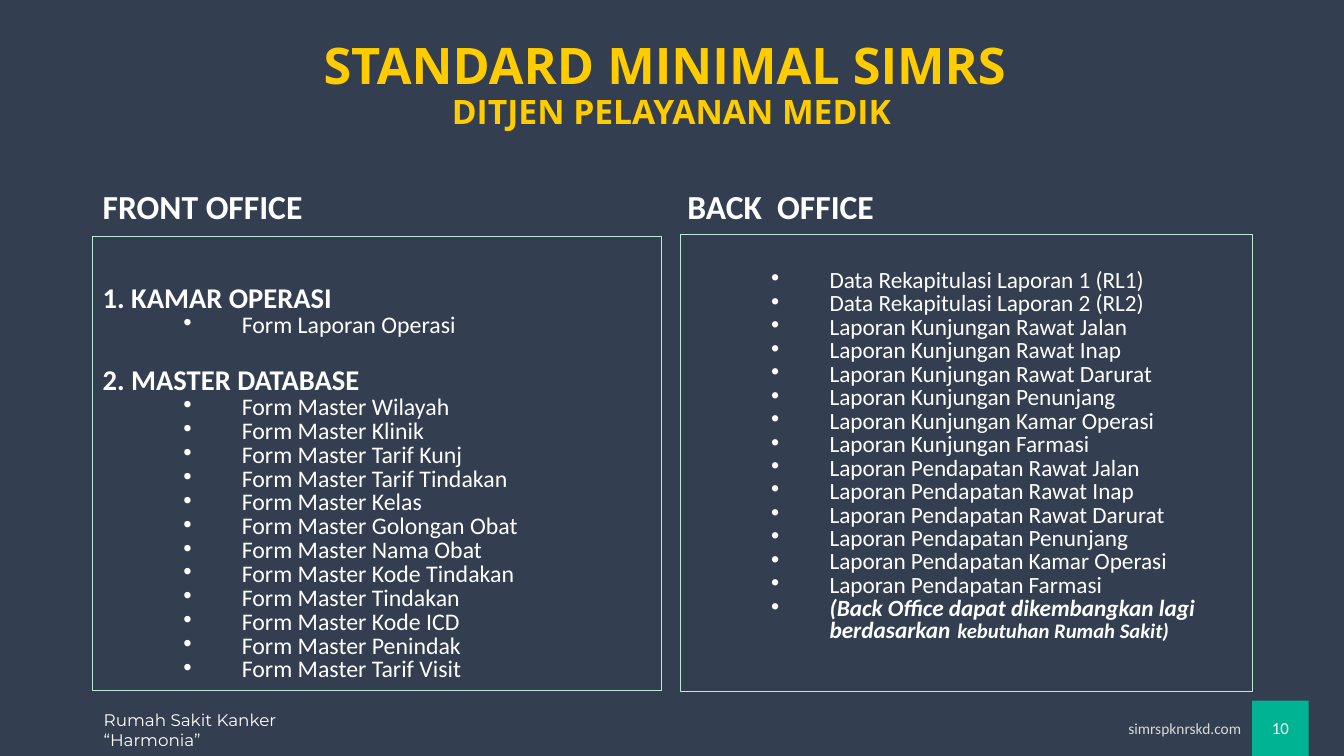
"""Build the SIMRS minimum standard slide with front and back office panels."""
from lxml import etree
from pptx import Presentation
from pptx import util as u
from pptx.dml.color import RGBColor
from pptx.enum import shapes, text
from pptx.oxml.ns import qn

NAVY = RGBColor(0x33, 0x3F, 0x50)
TEAL = RGBColor(0x00, 0xB3, 0x93)
MINT = RGBColor(0xBD, 0xEA, 0xDA)
GOLD = RGBColor(0xFF, 0xCC, 0x00)
WHITE = RGBColor(0xFF, 0xFF, 0xFF)
SILVER = RGBColor(0xD9, 0xD9, 0xD9)

TOP, MIDDLE, BOTTOM = text.MSO_ANCHOR.TOP, text.MSO_ANCHOR.MIDDLE, text.MSO_ANCHOR.BOTTOM
LEFT, CENTER, RIGHT = text.PP_ALIGN.LEFT, text.PP_ALIGN.CENTER, text.PP_ALIGN.RIGHT

MASTER_FORMS = ["Wilayah", "Klinik", "Tarif Kunj", "Tarif Tindakan", "Kelas", "Golongan Obat",
                "Nama Obat", "Kode Tindakan", "Tindakan", "Kode ICD", "Penindak", "Tarif Visit"]
UNITS = ["Rawat Jalan", "Rawat Inap", "Rawat Darurat", "Penunjang", "Kamar Operasi", "Farmasi"]

front_lines = [("1. KAMAR OPERASI", 0), ("Form Laporan Operasi", 4.8), ("2. MASTER DATABASE", 27)]
front_lines += [(f"Form Master {form}", 4.8) for form in MASTER_FORMS]
back_lines = [(f"Data Rekapitulasi Laporan {n} (RL{n})", 4.8 * (n - 1)) for n in (1, 2)]
back_lines += [(f"Laporan {topic} {unit}", 4.8) for topic in ("Kunjungan", "Pendapatan") for unit in UNITS]
back_lines.append(("", 4.8))


def style(para, size, color=WHITE, name="Calibri", bold=False, spacing=0.9, align=LEFT):
    para.alignment = align
    para.line_spacing = spacing
    para.font.size = u.Pt(size)
    para.font.name = name
    para.font.bold = bold
    para.font.color.rgb = color


def add_bullet(para):
    props = para._p.get_or_add_pPr()
    props.set("marL", str(u.Inches(1.38)))
    props.set("indent", str(u.Inches(-0.58)))
    etree.SubElement(props, qn("a:buFont"), typeface="Arial")
    etree.SubElement(props, qn("a:buChar"), char="•")


deck = Presentation()
deck.slide_width, deck.slide_height = u.Inches(13.33), u.Inches(7.5)
page = deck.slides.add_slide(deck.slide_layouts[6])
page.background.fill.solid()
page.background.fill.fore_color.rgb = NAVY

badge = page.shapes.add_shape(shapes.MSO_SHAPE.RECTANGLE, u.Inches(12.42), u.Inches(6.95),
                              u.Inches(0.56), u.Inches(0.55))
badge.shadow.inherit = False
badge.fill.solid()
badge.fill.fore_color.rgb = TEAL
badge.line.fill.background()

labels = [
    ("simrspknrskd.com", (10.37, 7.11, 2.04, 0.23), 11, SILVER, "Calibri", False, 0.9, RIGHT, TOP),
    ("Rumah Sakit Kanker\v“Harmonia”", (0.93, 6.99, 2.87, 0.5), 12, WHITE, "Montserrat", False, 1.0, LEFT, TOP),
    ("STANDARD MINIMAL SIMRS \vDITJEN PELAYANAN MEDIK", (0.91, 0.13, 11.5, 1.45), 36, GOLD, "Open Sans",
     True, 0.9, CENTER, MIDDLE),
    ("FRONT OFFICE", (0.92, 1.64, 5.64, 0.66), 24, WHITE, "Calibri", True, 0.9, LEFT, BOTTOM),
    ("BACK  OFFICE", (6.72, 1.69, 5.67, 0.61), 24, WHITE, "Calibri", True, 0.9, LEFT, BOTTOM),
    ("10", (12.42, 7.11, 0.56, 0.23), 12, WHITE, "Calibri", False, 1.0, CENTER, MIDDLE),
]
for words, place, size, color, name, bold, spacing, align, anchor in labels:
    box = page.shapes.add_textbox(*map(u.Inches, place))
    box.text_frame.word_wrap = True
    box.text_frame.vertical_anchor = anchor
    para = box.text_frame.paragraphs[0]
    para.text = words
    style(para, size, color, name, bold, spacing, align)
    if size == 36:
        para.runs[1].font.size = u.Pt(24)

panels = [
    ((0.92, 2.35, 5.64, 4.5), 0.55, 17, front_lines),
    ((6.75, 2.33, 5.67, 4.53), 0.4, 16.6, back_lines),
]
for place, top_inset, item_size, lines in panels:
    panel = page.shapes.add_shape(shapes.MSO_SHAPE.RECTANGLE, *map(u.Inches, place))
    panel.shadow.inherit = False
    panel.fill.background()
    panel.line.color.rgb = MINT
    panel.line.width = u.Pt(0.75)
    frame = panel.text_frame
    frame.word_wrap = True
    frame.vertical_anchor = TOP
    frame.margin_top = u.Inches(top_inset)
    for index, (words, gap) in enumerate(lines):
        para = frame.paragraphs[0] if index == 0 else frame.add_paragraph()
        heading = words[:1].isdigit()
        if words:
            para.text = words
        if not heading:
            add_bullet(para)
        style(para, 20.4 if heading else item_size, bold=heading, spacing=0.6)
        para.space_before = u.Pt(gap)

for words, size in [("(Back Office dapat dikembangkan lagi berdasarkan", 16.6), (" ", 22.2),
                    ("kebutuhan Rumah Sakit)", 14.8)]:
    span = para.add_run()
    span.text = words
    span.font.size = u.Pt(size)
para.font.bold = para.font.italic = True

deck.save("out.pptx")
